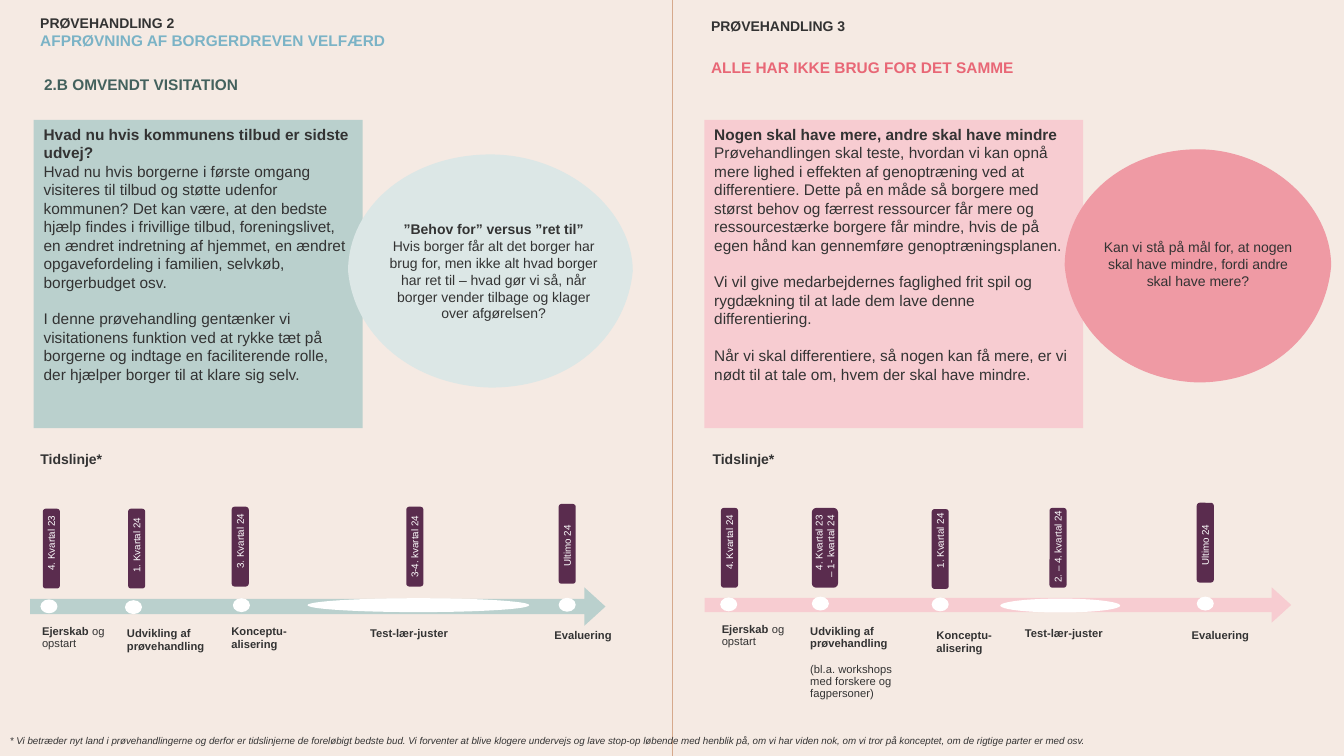
import pptx
import pptx.util
import pptx.dml.color
import pptx.enum.shapes
import pptx.enum.text
import pptx.oxml.ns
from dataclasses import dataclass
from lxml import etree

Cm, Pt = pptx.util.Cm, pptx.util.Pt
SHAPE = pptx.enum.shapes.MSO_SHAPE
ALIGN = pptx.enum.text.PP_ALIGN
ANCHOR = pptx.enum.text.MSO_ANCHOR
INK, WHITE, PLUM = "333333", "FFFFFF", "5A2C4E"
PILL_HEIGHT, LABEL_LINE, DOT_HEIGHT = 2.01, 0.3, 0.35
BLOB_CURVE = [(0, .5), (0, .22), (.22, 0), (.5, 0), (.77, 0), (1, .24), (1, .5),
              (.98, .76), (.8, 1), (.5, 1), (.22, .99), (.02, .77), (0, .5)]


@dataclass
class Milestone:
    """Positions are in cm from the left edge of the panel and the top of the slide."""
    quarter: str
    pill: tuple       # left, top
    label_top: float
    dot: tuple        # left, middle
    caption: tuple    # left, top, width
    paragraphs: list
    pill_width: float = 0.43
    dot_width: float = 0.43


def colour(hex_value):
    return pptx.dml.color.RGBColor.from_string(hex_value)


def apply_formats(target, formats):
    for name, value in formats.items():
        setattr(target, name, value)


def para(*runs, **formats):
    """A paragraph of (text, bold) or (text, bold, hex, size) runs."""
    return runs, formats


def write(frame, paragraphs, size, ink=INK, **font_formats):
    frame.word_wrap = True
    for index, (runs, formats) in enumerate(paragraphs):
        paragraph = frame.paragraphs[0] if index == 0 else frame.add_paragraph()
        apply_formats(paragraph, {"alignment": ALIGN.LEFT, **formats})
        for text, bold, *style in runs:
            run = paragraph.add_run()
            run.text = text
            run_ink, run_size = style or (ink, size)
            apply_formats(run.font, {"name": "Arial", "size": Pt(run_size),
                                     "bold": bold, **font_formats})
            run.font.color.rgb = colour(run_ink)


def add_text(slide, box, paragraphs, size, ink=INK, **font_formats):
    area = slide.shapes.add_textbox(*map(Cm, box))
    write(area.text_frame, paragraphs, size, ink, **font_formats)
    return area


def add_filled(slide, preset, box, fill):
    shape = slide.shapes.add_shape(preset, *map(Cm, box))
    shape.shadow.inherit = False
    shape.fill.solid()
    shape.fill.fore_color.rgb = colour(fill)
    shape.line.fill.background()
    return shape


def add_blob(slide, box, fill):
    left, top, width, height = map(Cm, box)
    anchors = [(int(left + x * width), int(top + y * height)) for x, y in BLOB_CURVE[::3]]
    builder = slide.shapes.build_freeform(*anchors[0], scale=1.0)
    builder.add_line_segments(anchors[1:], close=True)
    blob = builder.convert_to_shape()
    qn = pptx.oxml.ns.qn
    for index, side in enumerate(list(blob.element.iter(qn("a:lnTo")))):
        curve = etree.SubElement(side.getparent(), qn("a:cubicBezTo"))
        for x, y in BLOB_CURVE[3 * index + 1:3 * index + 4]:
            etree.SubElement(curve, qn("a:pt"), x=str(int(x * width)), y=str(int(y * height)))
        side.getparent().replace(side, curve)
    blob.shadow.inherit = False
    blob.fill.solid()
    blob.fill.fore_color.rgb = colour(fill)
    blob.line.color.rgb = colour(fill)
    blob.line.width = Pt(1)


def add_milestone(slide, panel_left, stop):
    pill_left, pill_top = stop.pill
    add_filled(slide, SHAPE.FLOWCHART_ALTERNATE_PROCESS,
               (panel_left + pill_left, pill_top, stop.pill_width, PILL_HEIGHT), PLUM)
    lines = stop.quarter.split("\n")
    thickness = 0.26 + LABEL_LINE * len(lines)
    length = 0.72 + 0.11 * max(map(len, lines))
    centre = panel_left + pill_left + stop.pill_width / 2
    label = add_text(slide, (centre - length / 2, stop.label_top + (length - thickness) / 2,
                             length, thickness),
                     [para((line, False), alignment=ALIGN.RIGHT) for line in lines], 7, WHITE)
    label.rotation = 270
    dot_left, dot_middle = stop.dot
    add_filled(slide, SHAPE.OVAL, (panel_left + dot_left, dot_middle - DOT_HEIGHT / 2,
                                   stop.dot_width, DOT_HEIGHT), WHITE)
    left, top, width = stop.caption
    add_text(slide, (panel_left + left, top, width, 1.2), stop.paragraphs, 8)


def add_panel(slide, panel_left, tint, blob_fill, arrow, idea, blob_box, question, stops):
    """One trial: idea and question are pairs of box and paragraphs."""
    def placed(box):
        return (panel_left + box[0], *box[1:])

    shaft = add_filled(slide, SHAPE.RIGHT_ARROW, placed(arrow), tint)
    shaft.adjustments[0], shaft.adjustments[1] = 0.4, 0.55
    idea_box, idea_text = idea
    card = add_filled(slide, SHAPE.RECTANGLE, placed(idea_box), tint)
    card.text_frame.vertical_anchor = ANCHOR.TOP
    write(card.text_frame, idea_text, 11)
    add_blob(slide, placed(blob_box), blob_fill)
    question_box, question_text = question
    add_text(slide, placed(question_box), question_text, 10)
    add_text(slide, placed((0.77, 11.28, 15.49, 0.9)),
             [para(("Tidslinje*", True), line_spacing=0.9)], 10)
    for stop in stops:
        add_milestone(slide, panel_left, stop)


def add_headings(slide, panel_left):
    title = slide.shapes.title
    apply_formats(title, dict(zip(("left", "top", "width", "height"),
                                  map(Cm, (0.76, 0.24, 15.37, 1.14)))))
    apply_formats(title.text_frame, {"vertical_anchor": ANCHOR.TOP,
                                     "auto_size": pptx.enum.text.MSO_AUTO_SIZE.NONE})
    write(title.text_frame, [para(("PRØVEHANDLING 2", True)),
          para(("AFPRØVNING AF BORGERDREVEN VELFÆRD", True, "7BB3C6", 11))], 10)
    add_text(slide, (0.86, 1.78, 7.39, 0.76),
             [para(("2.B OMVENDT VISITATION", True))], 11, "43615D")
    add_text(slide, (panel_left + 0.73, 0.32, 9.78, 1.75),
             [para(("PRØVEHANDLING 3", True), space_after=Pt(17)),
              para(("ALLE HAR IKKE BRUG FOR DET SAMME", True, "E86776", 11))], 10)


def add_divider(slide, x):
    divider = slide.shapes.add_connector(pptx.enum.shapes.MSO_CONNECTOR.STRAIGHT,
                                         Cm(x), Cm(0), Cm(x), Cm(19.05))
    divider.line.color.rgb = colour("D6A98C")
    divider.line.width = Pt(0.5)
    etree.SubElement(divider.element.spPr, pptx.oxml.ns.qn("a:effectLst"))


def main():
    deck = pptx.Presentation()
    deck.slide_width, deck.slide_height = Cm(33.87), Cm(19.05)
    slide = deck.slides.add_slide(deck.slide_layouts[5])
    slide.background.fill.solid()
    slide.background.fill.fore_color.rgb = colour("F5EAE3")
    middle, gap = 16.94, Pt(13)
    startup = [para(("Ejerskab", True), (" og opstart", False), line_spacing=0.9)]
    concept = [para(("Konceptu-alisering", True))]
    testing = [para(("Test-lær-juster", True), alignment=ALIGN.CENTER)]
    evaluation = [para(("Evaluering", True))]
    development = ("Udvikling af prøvehandling", True)

    add_headings(slide, middle)
    add_divider(slide, middle)
    add_panel(slide, 0, "BAD0CD", "DCE7E6", (0.76, 14.8, 14.5, 0.97), ((0.85, 3.02, 8.29, 7.77), [
        para(("Hvad nu hvis kommunens tilbud er sidste udvej?", True)),
        para(("Hvad nu hvis borgerne i første omgang visiteres til tilbud og støtte udenfor kommunen? Det kan være, at den bedste hjælp findes i frivillige tilbud, foreningslivet, en ændret indretning af hjemmet, en ændret opgavefordeling i familien, selvkøb, borgerbudget osv.", False), space_after=gap),
        para(("I denne prøvehandling gentænker vi visitationens funktion ved at rykke tæt på borgerne og indtage en faciliterende rolle, der hjælper borger til at klare sig selv.", False))]),
        (8.79, 3.91, 7.14, 5.84), ((9.53, 5.44, 5.82, 2.82), [
            para(("”Behov for” versus ”ret til”", True), alignment=ALIGN.CENTER),
            para(("Hvis borger får alt det borger har brug for, men ikke alt hvad borger har ret til – hvad gør vi så, når borger vender tilbage og klager over afgørelsen?", False), alignment=ALIGN.CENTER)]),
        [Milestone("4. Kvartal 23", (1.08, 12.82), 12.75, (1.02, 15.28), (0.81, 15.65, 2.18), startup),
         Milestone("1. Kvartal 24", (3.23, 12.82), 12.8, (3.15, 15.3), (2.95, 15.65, 2.67), [para(development)]),
         Milestone("3. Kvartal 24", (5.84, 12.77), 12.7, (5.87, 15.25), (5.58, 15.6, 2.16), concept),
         Milestone("3-4. kvartal 24", (10.24, 12.77), 12.75, (7.75, 15.25), (7.67, 15.65, 5.28), testing, dot_width=5.59),
         Milestone("Ultimo 24", (14.08, 12.7), 12.99, (14.08, 15.24), (13.72, 15.7, 2.11), evaluation)])
    add_panel(slide, middle, "F7CCD1", "EF9AA4", (0.82, 14.8, 14.78, 0.89), ((0.81, 3.02, 9.55, 7.77), [
        para(("Nogen skal have mere, andre skal have mindre", True)),
        para(("Prøvehandlingen skal teste, hvordan vi kan opnå mere lighed i effekten af genoptræning ved at differentiere. Dette på en måde så borgere med størst behov og færrest ressourcer får mere og ressourcestærke borgere får mindre, hvis de på egen hånd kan gennemføre genoptræningsplanen.", False), space_after=gap),
        para(("Vi vil give medarbejdernes faglighed frit spil og rygdækning til at lade dem lave denne differentiering.", False), space_after=gap),
        para(("Når vi skal differentiere, så nogen kan få mere, er vi nødt til at tale om, hvem der skal have mindre.", False))]),
        (9.91, 3.78, 6.68, 5.84), ((10.52, 5.89, 5.46, 1.55), [
            para(("Kan vi stå på mål for, at nogen skal have mindre, fordi andre skal have mere?", False), alignment=ALIGN.CENTER)]),
        [Milestone("4. Kvartal 24", (1.23, 12.8), 12.73, (1.21, 15.23), (1.0, 15.6, 2.18), startup),
         Milestone("4. Kvartal 23\n– 1- kvartal 24", (3.52, 12.8), 12.74, (3.52, 15.21), (3.23, 15.65, 2.82),
                   [para(development, line_spacing=0.9),
                    para(("(bl.a. workshops med forskere og fagpersoner)", False), line_spacing=0.9, space_before=Pt(10))], pill_width=0.66),
         Milestone("1. Kvartal 24", (6.54, 12.83), 12.69, (6.54, 15.23), (6.41, 15.7, 2.16), concept),
         Milestone("2. – 4. kvartal 24", (9.51, 12.8), 12.62, (8.27, 15.26), (7.23, 15.65, 5.28), testing, dot_width=3.02),
         Milestone("Ultimo 24", (13.22, 12.67), 12.97, (13.22, 15.21), (12.84, 15.7, 2.11), evaluation)])
    add_text(slide, (0, 18.39, 27.94, 0.56), [para(("* Vi betræder nyt land i prøvehandlingerne og derfor er tidslinjerne de foreløbigt bedste bud. Vi forventer at blive klogere undervejs og lave stop-op løbende med henblik på, om vi har viden nok, om vi tror på konceptet, om de rigtige parter er med osv.", False))], 7, italic=True)
    deck.save("out.pptx")


if __name__ == "__main__":
    main()
